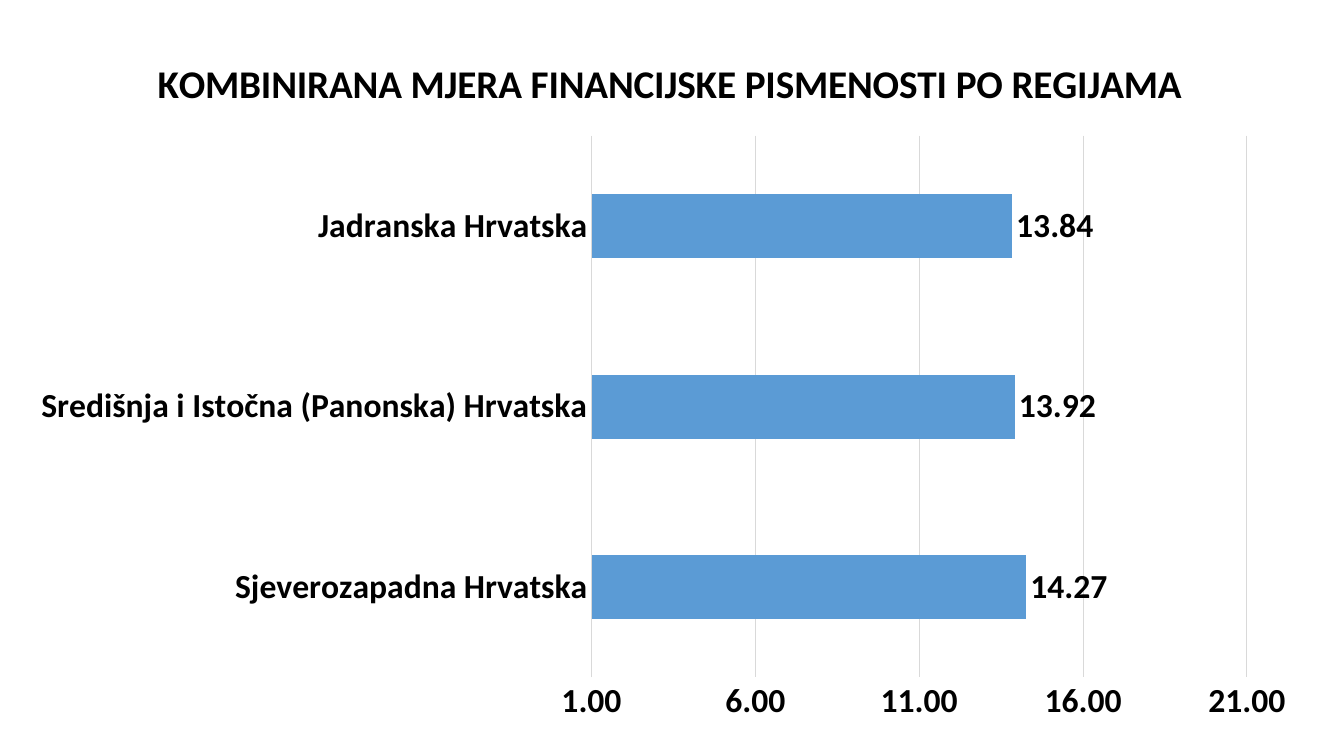
from dataclasses import dataclass

from lxml.etree import SubElement
from pptx import Presentation
from pptx.chart.data import CategoryChartData
from pptx.dml.color import RGBColor
from pptx.enum.chart import XL_CHART_TYPE, XL_LABEL_POSITION, XL_TICK_MARK
from pptx.oxml.ns import qn
from pptx.util import Inches, Pt


@dataclass(frozen=True)
class Theme:
    font: str = "Calibri"
    text: RGBColor = RGBColor(0x00, 0x00, 0x00)
    bar: RGBColor = RGBColor(0x5B, 0x9B, 0xD5)
    grid: RGBColor = RGBColor(0xD9, 0xD9, 0xD9)
    grid_width: float = 0.75
    title_size: int = 28
    label_size: int = 24
    number_format: str = "0.00"


class SlideBuilder:
    def __init__(self, slide, theme):
        self.slide = slide
        self.theme = theme

    def style_font(self, font, size):
        font.name = self.theme.font
        font.size = Pt(size)
        font.bold = True
        font.color.rgb = self.theme.text

    def style_line(self, line):
        line.color.rgb = self.theme.grid
        line.width = Pt(self.theme.grid_width)

    def style_axis(self, axis):
        axis.major_tick_mark = XL_TICK_MARK.NONE
        axis.minor_tick_mark = XL_TICK_MARK.NONE
        self.style_font(axis.tick_labels.font, self.theme.label_size)

    def bar_chart(self, title, values_by_category, left, top, width, height):
        data = CategoryChartData(number_format=self.theme.number_format)
        data.categories = list(values_by_category)
        data.add_series("Series 1", list(values_by_category.values()))
        chart = self.slide.shapes.add_chart(
            XL_CHART_TYPE.BAR_CLUSTERED, Inches(left), Inches(top),
            Inches(width), Inches(height), data).chart
        chart.has_legend = False
        self.style_font(chart.font, self.theme.label_size)
        self.chart_title(chart, title)

        plot = chart.plots[0]
        plot.gap_width = 182
        plot.vary_by_categories = False
        fill = plot.series[0].format.fill
        fill.solid()
        fill.fore_color.rgb = self.theme.bar
        self.value_labels(plot)
        return chart

    def chart_title(self, chart, text):
        chart.has_title = True
        chart.chart_title.include_in_layout = False
        paragraph = chart.chart_title.text_frame.paragraphs[0]
        paragraph.text = text
        self.style_font(paragraph.font, self.theme.title_size)

    def value_labels(self, plot):
        plot.has_data_labels = True
        labels = plot.data_labels
        labels.show_value = True
        labels.number_format = self.theme.number_format
        labels.number_format_is_linked = False
        labels.position = XL_LABEL_POSITION.OUTSIDE_END
        self.style_font(labels.font, self.theme.label_size)

    def chart_axes(self, chart, minimum, maximum, step):
        self.style_axis(chart.category_axis)
        self.style_line(chart.category_axis.format.line)

        axis = chart.value_axis
        self.style_axis(axis)
        axis.format.line.fill.background()
        axis.minimum_scale = minimum
        axis.maximum_scale = maximum
        axis.major_unit = step
        axis.has_major_gridlines = True
        self.style_line(axis.major_gridlines.format.line)
        axis.tick_labels.number_format = self.theme.number_format
        axis.tick_labels.number_format_is_linked = False

    def place_plot(self, chart, **fractions):
        """Fix the inner plot area as fractions of the chart's size."""
        plot_area = chart.plots[0]._element.getparent()
        layout = plot_area.find(qn("c:layout"))
        if layout is None:
            layout = SubElement(plot_area, qn("c:layout"))
            plot_area.insert(0, layout)
        manual = SubElement(layout, qn("c:manualLayout"))
        settings = {"layoutTarget": "inner", "xMode": "edge", "yMode": "edge", **fractions}
        for name, value in settings.items():
            SubElement(manual, qn(f"c:{name}")).set("val", str(value))


def main():
    presentation = Presentation()
    presentation.slide_width = Inches(13.33)
    presentation.slide_height = Inches(7.5)
    blank_layout = presentation.slide_layouts[6]
    builder = SlideBuilder(presentation.slides.add_slide(blank_layout), Theme())

    literacy_by_region = {
        "Sjeverozapadna Hrvatska": 14.27,
        "Središnja i Istočna (Panonska) Hrvatska": 13.92,
        "Jadranska Hrvatska": 13.84,
    }
    chart = builder.bar_chart(
        "KOMBINIRANA MJERA FINANCIJSKE PISMENOSTI PO REGIJAMA",
        literacy_by_region, 0.2, 0.3, 12.88, 6.98)
    builder.chart_axes(chart, minimum=1, maximum=22, step=5)
    builder.place_plot(chart, x=0.44, y=0.15, w=0.53, h=0.77)
    presentation.save("out.pptx")


if __name__ == "__main__":
    main()
